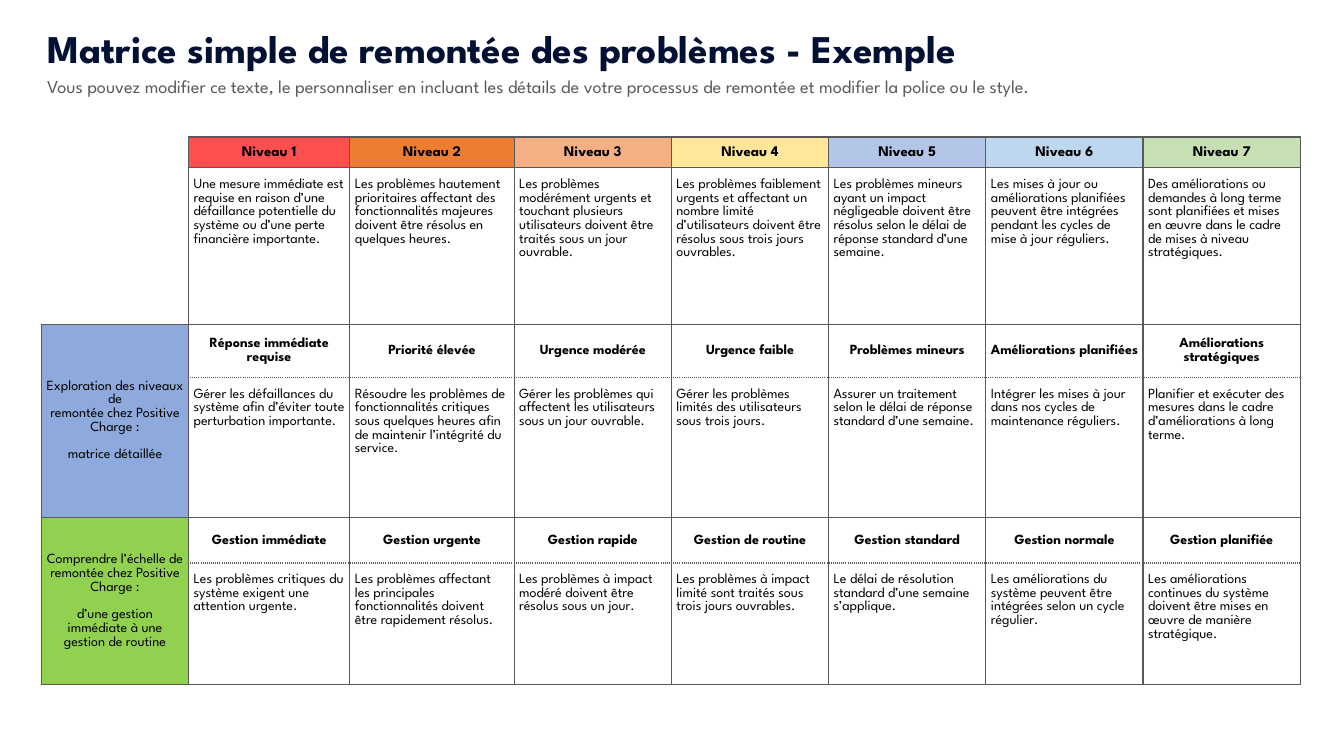
import dataclasses

import lxml.etree
import pptx
import pptx.dml.color
import pptx.enum.text
import pptx.oxml.ns
import pptx.presentation
import pptx.slide
import pptx.table
import pptx.text.text
import pptx.util

RGBColor = pptx.dml.color.RGBColor
NAVY = RGBColor(0x01, 0x10, 0x33)
GREY = RGBColor(0x59, 0x59, 0x59)
BLACK = RGBColor(0x00, 0x00, 0x00)
WHITE = RGBColor(0xFF, 0xFF, 0xFF)
RED = RGBColor(0xFF, 0x4F, 0x4F)
ORANGE = RGBColor(0xED, 0x7D, 0x31)
PEACH = RGBColor(0xF4, 0xB0, 0x84)
YELLOW = RGBColor(0xFF, 0xE6, 0x99)
LAVENDER = RGBColor(0xB4, 0xC6, 0xE7)
SKY = RGBColor(0xBD, 0xD7, 0xEE)
SAGE = RGBColor(0xC6, 0xE0, 0xB4)
BLUE = RGBColor(0x8E, 0xA9, 0xDB)
GREEN = RGBColor(0x92, 0xD0, 0x50)

FONT = "League Spartan"
SLIDE_WIDTH = pptx.util.Inches(13.33)
SLIDE_HEIGHT = pptx.util.Inches(7.5)
COLUMN_PERCENTS = [10.95, 12, 12.23] + [11.7] * 5
ROW_PERCENTS = [4, 20.67, 7.07, 18.53, 6, 16.13]
DESCRIPTION_ROWS = (1, 3, 5)
SUBHEADING_ROWS = (2, 4)
SIDES = ("L", "R", "T", "B")


@dataclasses.dataclass(frozen=True)
class Level:
    colour: RGBColor
    texts: tuple[str, ...]


@dataclasses.dataclass(frozen=True)
class Section:
    first_row: int
    colour: RGBColor
    paragraphs: tuple[tuple[str, ...], ...]


@dataclasses.dataclass(frozen=True)
class Heading:
    left: float
    top: float
    width: float
    height: float
    size: float
    colour: RGBColor
    bold: bool
    text: str


HEADINGS = (
    Heading(2.78, 2.53, 88.22, 7.6, 28, NAVY, True,
            "Matrice simple de remontée des problèmes - Exemple"),
    Heading(2.78, 9.33, 93.1, 4.27, 13, GREY, False,
            "Vous pouvez modifier ce texte, le personnaliser en incluant les détails de votre "
            "processus de remontée et modifier la police ou le style."),
)

LEVELS = (
    Level(RED, (
        "Niveau 1",
        "Une mesure immédiate est requise en raison d’une défaillance potentielle du système ou d’une perte financière importante.",
        "Réponse immédiate requise",
        "Gérer les défaillances du système afin d’éviter toute perturbation importante.",
        "Gestion immédiate",
        "Les problèmes critiques du système exigent une attention urgente.")),
    Level(ORANGE, (
        "Niveau 2",
        "Les problèmes hautement prioritaires affectant des fonctionnalités majeures doivent être résolus en quelques heures.",
        "Priorité élevée",
        "Résoudre les problèmes de fonctionnalités critiques sous quelques heures afin de maintenir l’intégrité du service.",
        "Gestion urgente",
        "Les problèmes affectant les principales fonctionnalités doivent être rapidement résolus.")),
    Level(PEACH, (
        "Niveau 3",
        "Les problèmes modérément urgents et touchant plusieurs utilisateurs doivent être traités sous un jour ouvrable.",
        "Urgence modérée",
        "Gérer les problèmes qui affectent les utilisateurs sous un jour ouvrable.",
        "Gestion rapide",
        "Les problèmes à impact modéré doivent être résolus sous un jour.")),
    Level(YELLOW, (
        "Niveau 4",
        "Les problèmes faiblement urgents et affectant un nombre limité d’utilisateurs doivent être résolus sous trois jours ouvrables.",
        "Urgence faible",
        "Gérer les problèmes limités des utilisateurs sous trois jours.",
        "Gestion de routine",
        "Les problèmes à impact limité sont traités sous trois jours ouvrables.")),
    Level(LAVENDER, (
        "Niveau 5",
        "Les problèmes mineurs ayant un impact négligeable doivent être résolus selon le délai de réponse standard d’une semaine.",
        "Problèmes mineurs",
        "Assurer un traitement selon le délai de réponse standard d’une semaine.",
        "Gestion standard",
        "Le délai de résolution standard d’une semaine s’applique.")),
    Level(SKY, (
        "Niveau 6",
        "Les mises à jour ou améliorations planifiées peuvent être intégrées pendant les cycles de mise à jour réguliers.",
        "Améliorations planifiées",
        "Intégrer les mises à jour dans nos cycles de maintenance réguliers.",
        "Gestion normale",
        "Les améliorations du système peuvent être intégrées selon un cycle régulier.")),
    Level(SAGE, (
        "Niveau 7",
        "Des améliorations ou demandes à long terme sont planifiées et mises en œuvre dans le cadre de mises à niveau stratégiques.",
        "Améliorations stratégiques",
        "Planifier et exécuter des mesures dans le cadre d’améliorations à long terme.",
        "Gestion planifiée",
        "Les améliorations continues du système doivent être mises en œuvre de manière stratégique.")),
)

SECTIONS = (
    Section(2, BLUE, (
        ("Exploration des niveaux de", "remontée chez Positive Charge :"),
        ("matrice détaillée",))),
    Section(4, GREEN, (
        ("Comprendre l’échelle de remontée chez Positive Charge :",),
        ("d’une gestion immédiate à une gestion de routine",))),
)


def across(percent: float) -> pptx.util.Emu:
    return pptx.util.Emu(round(SLIDE_WIDTH * percent / 100))


def down(percent: float) -> pptx.util.Emu:
    return pptx.util.Emu(round(SLIDE_HEIGHT * percent / 100))


def add_run(paragraph: pptx.text.text._Paragraph, text: str, size: float,
            colour: RGBColor, bold: bool) -> None:
    run = paragraph.add_run()
    run.text = text
    run.font.name = FONT
    run.font.size = pptx.util.Pt(size)
    run.font.bold = bold
    run.font.color.rgb = colour


def add_heading(slide: pptx.slide.Slide, heading: Heading) -> None:
    shape = slide.shapes.add_textbox(across(heading.left), down(heading.top),
                                     across(heading.width), down(heading.height))
    shape.text_frame.word_wrap = True
    add_run(shape.text_frame.paragraphs[0], heading.text, heading.size, heading.colour, heading.bold)


def set_borders(cell: pptx.table._Cell, row: int, column: int) -> None:
    corner = column == 0 and row < 2
    properties = cell._tc.get_or_add_tcPr()
    for index, side in enumerate(SIDES):
        line = lxml.etree.Element(pptx.oxml.ns.qn(f"a:ln{side}"), w=str(pptx.util.Pt(1)))
        properties.insert(index, line)
        if corner and side != "R" and (row, side) != (1, "B"):
            lxml.etree.SubElement(line, pptx.oxml.ns.qn("a:noFill"))
            continue
        fill = lxml.etree.SubElement(line, pptx.oxml.ns.qn("a:solidFill"))
        lxml.etree.SubElement(fill, pptx.oxml.ns.qn("a:srgbClr"), val=str(GREY))
        dotted = column > 0 and (row - (side == "T")) in SUBHEADING_ROWS and side in "TB"
        lxml.etree.SubElement(line, pptx.oxml.ns.qn("a:prstDash"), val="sysDot" if dotted else "solid")


def fill_cell(cell: pptx.table._Cell, paragraphs: tuple[tuple[str, ...], ...], colour: RGBColor,
              size: float, bold: bool, description: bool) -> None:
    cell.fill.solid()
    cell.fill.fore_color.rgb = colour
    anchors = pptx.enum.text.MSO_ANCHOR
    alignments = pptx.enum.text.PP_ALIGN
    cell.vertical_anchor = anchors.TOP if description else anchors.MIDDLE
    cell.margin_top = down(1.33 if description else 0)
    for index, lines in enumerate(paragraphs):
        paragraph = cell.text_frame.add_paragraph() if index else cell.text_frame.paragraphs[0]
        paragraph.alignment = alignments.LEFT if description else alignments.CENTER
        paragraph.line_spacing = 1.07
        paragraph.space_before = pptx.util.Pt(12 if description else 10 * index)
        for line_index, line in enumerate(lines):
            if line_index:
                paragraph.add_line_break()
            add_run(paragraph, line, size, BLACK, bold)


def add_matrix(slide: pptx.slide.Slide) -> None:
    table = slide.shapes.add_table(len(ROW_PERCENTS), len(COLUMN_PERCENTS), across(3.08), down(18.13),
                                   across(sum(COLUMN_PERCENTS)), down(sum(ROW_PERCENTS))).table
    table.first_row = False
    table.horz_banding = False
    for column, percent in zip(table.columns, COLUMN_PERCENTS):
        column.width = across(percent)
    for row, percent in zip(table.rows, ROW_PERCENTS):
        row.height = down(percent)
    for row in range(len(ROW_PERCENTS)):
        for column in range(len(COLUMN_PERCENTS)):
            cell = table.cell(row, column)
            cell.margin_left = cell.margin_right = across(0.38)
            cell.margin_top = cell.margin_bottom = 0
            cell.fill.background()
            set_borders(cell, row, column)
    for column, level in enumerate(LEVELS, start=1):
        for row, text in enumerate(level.texts):
            description = row in DESCRIPTION_ROWS
            fill_cell(table.cell(row, column), ((text,),), WHITE if row else level.colour,
                      10 if row else 10.5, not description, description)
    for section in SECTIONS:
        cell = table.cell(section.first_row, 0)
        cell.merge(table.cell(section.first_row + 1, 0))
        fill_cell(cell, section.paragraphs, section.colour, 10, False, False)


def main() -> None:
    presentation = pptx.Presentation()
    presentation.slide_width = SLIDE_WIDTH
    presentation.slide_height = SLIDE_HEIGHT
    slide = presentation.slides.add_slide(presentation.slide_layouts[6])
    add_matrix(slide)
    for heading in HEADINGS:
        add_heading(slide, heading)
    presentation.save("out.pptx")


if __name__ == "__main__":
    main()
